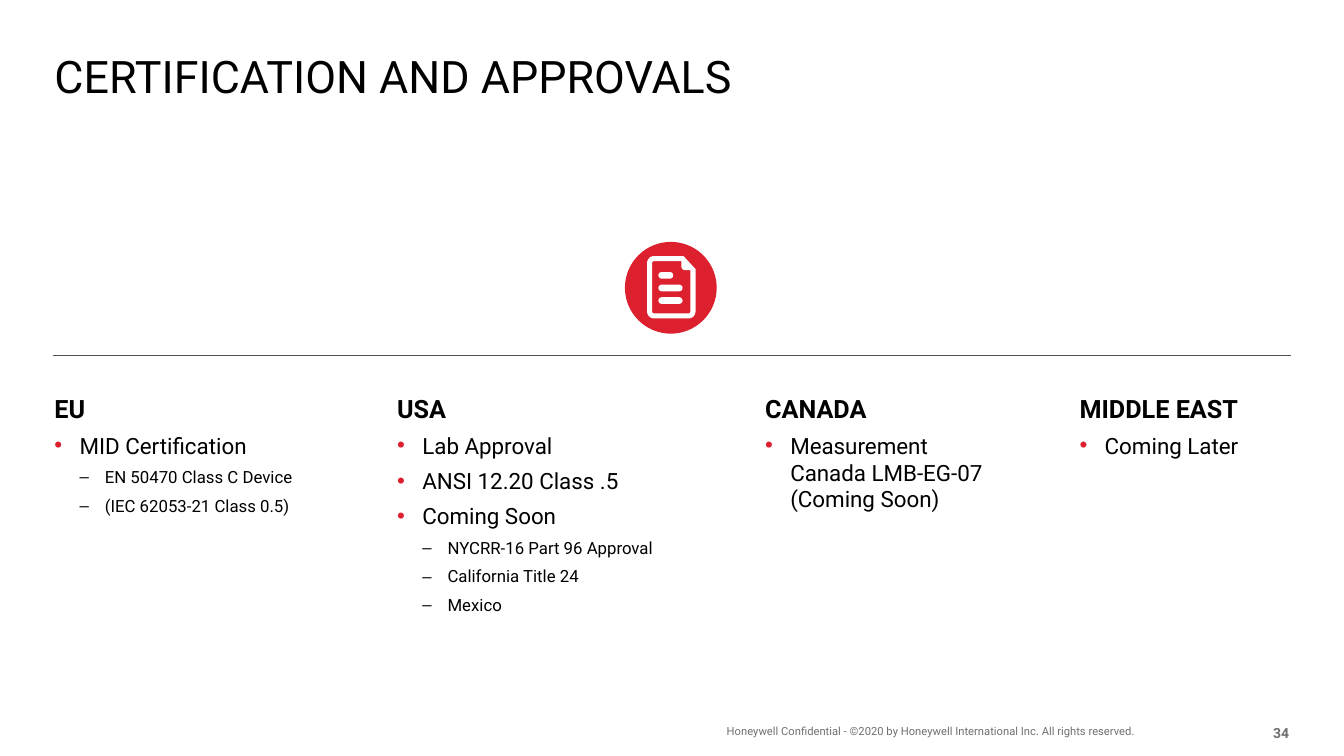
"""Build the certification and approvals slide."""
from math import cos, radians, sin

from lxml.etree import SubElement
from pptx import Presentation
from pptx.dml.color import RGBColor
from pptx.enum.shapes import MSO_CONNECTOR as Connector, MSO_SHAPE as Shape
from pptx.enum.text import MSO_ANCHOR as Anchor, MSO_AUTO_SIZE as AutoSize, PP_ALIGN as Align
from pptx.oxml.ns import qn
from pptx.util import Pt

RED, BLACK, WHITE, GREY, RULE = "DC202E", "000000", "FFFFFF", "707070", "505050"


def paint(target, color):
    if hasattr(target, "solid"):
        target.solid()
        target = target.fore_color
    target.rgb = RGBColor.from_string(color)


def write(para, text, size, color=BLACK, bold=False):
    for number, line in enumerate(text.split("\n")):
        if number:
            para.add_line_break()
        span = para.add_run()
        span.text = line
        span.font.name, span.font.size, span.font.bold = "Roboto", Pt(size), bold
        paint(span.font.color, color)


deck = Presentation()
deck.slide_width, deck.slide_height = Pt(960), Pt(540)
page = deck.slides.add_slide(deck.slide_layouts.get_by_name("Comparison"))
title, *bodies = page.placeholders

footer = page.shapes.add_textbox(0, 0, 0, 0)
page_number = page.shapes.add_textbox(0, 0, 0, 0)
frames = [
    (title, 38.9, 38.9, 882, 33.1, Anchor.TOP),
    (bodies[0], 38.9, 280.8, 222.5, 160.6, Anchor.TOP),
    (bodies[1], 283.7, 280.8, 240.5, 160.6, Anchor.TOP),
    (bodies[2], 546.5, 280.8, 202.3, 160.6, Anchor.TOP),
    (bodies[3], 771.1, 280.8, 167, 160.6, Anchor.TOP),
    (footer, 519.1, 509.8, 324, 17.3, Anchor.BOTTOM),
    (page_number, 882, 510.5, 38.9, 18.7, Anchor.BOTTOM),
]
for box, left, top, width, height, anchor in frames:
    box.left, box.top, box.width, box.height = Pt(left), Pt(top), Pt(width), Pt(height)
    frame = box.text_frame
    frame.margin_left = frame.margin_top = frame.margin_right = frame.margin_bottom = 0
    frame.auto_size, frame.word_wrap, frame.vertical_anchor = AutoSize.NONE, True, anchor

heading = title.text_frame.paragraphs[0]
heading.alignment, heading.line_spacing = Align.LEFT, 0.9
write(heading, "CERTIFICATION AND APPROVALS", 32)
write(footer.text_frame.paragraphs[0],
      "Honeywell Confidential - ©2020 by Honeywell International Inc. All rights reserved.", 8, GREY)
page_number.text_frame.paragraphs[0].alignment = Align.RIGHT
write(page_number.text_frame.paragraphs[0], "34", 10, GREY, True)

regions = [
    [(0, "EU"), (1, "MID Certification"), (2, "EN 50470 Class C Device"),
     (2, "(IEC 62053-21 Class 0.5)")],
    [(0, "USA"), (1, "Lab Approval"), (1, "ANSI 12.20 Class .5"), (1, "Coming Soon"),
     (2, "NYCRR-16 Part 96 Approval"), (2, "California Title 24"), (2, "Mexico")],
    [(0, "CANADA"), (1, "Measurement \nCanada LMB-EG-07 (Coming Soon)")],
    [(0, "MIDDLE EAST"), (1, "Coming Later")],
]
sizes = [18, 16, 12]
bullets = [None, ("•", RED), ("‒", BLACK)]
for body, entries in zip(bodies, regions):
    frame = body.text_frame
    for number, (level, text) in enumerate(entries):
        para = frame.add_paragraph() if number else frame.paragraphs[0]
        para.level = level
        properties = para._p.get_or_add_pPr()
        properties.set("marL", str(Pt(18 * level)))
        properties.set("indent", str(Pt(-18 if level else 0)))
        if level:
            mark, color = bullets[level]
            tint = SubElement(properties, qn("a:buClr"))
            SubElement(tint, qn("a:srgbClr"), val=color)
            SubElement(properties, qn("a:buChar"), char=mark)
        else:
            SubElement(properties, qn("a:buNone"))
        para.space_before, para.space_after = Pt(0), Pt(6)
        write(para, text, sizes[level], bold=level == 0)

rule = page.shapes.add_connector(Connector.STRAIGHT, Pt(37.7), Pt(253.7), Pt(922.3), Pt(253.7))
rule.line.width = Pt(0.5)
paint(rule.line.fill, RULE)
SubElement(rule._element.spPr, qn("a:effectLst"))

icon = []
disc = page.shapes.add_shape(Shape.OVAL, Pt(446.4), Pt(172.8), Pt(65.5), Pt(65.5))
icon.append((disc, RED))

outer = [(496.8, 192.2), (488.2, 182.9)]
inner = [(493.2, 193), (489, 193), (487.4, 192.3), (486.7, 190.8), (486.7, 186.5)]
corners = [
    (outer, 5, [(467.2, 187.9, 270), (467.2, 222.5, 180), (491.8, 222.5, 90)]),
    (inner, 1.5, [(467.3, 188, 270), (467.3, 222.4, 180), (491.7, 222.4, 90)]),
]
for contour, radius, centres in corners:
    for x, y, start in centres:
        for turn in range(0, 91, 15):
            angle = radians(start - turn)
            contour.append((x + radius * cos(angle), y + radius * sin(angle)))
outer, inner = [[(Pt(x), Pt(y)) for x, y in contour] for contour in (outer, inner)]
builder = page.shapes.build_freeform(*outer[0])
builder.add_line_segments(outer[1:], close=True)
builder.move_to(*inner[0])
builder.add_line_segments(inner[1:], close=True)
icon.append((builder.convert_to_shape(), WHITE))

for row, width in enumerate([10.6, 17.3, 17.3]):
    bar = page.shapes.add_shape(Shape.ROUNDED_RECTANGLE, Pt(470.3), Pt(194.3 + 9 * row),
                                Pt(width), Pt(4.8))
    bar.adjustments[0] = 0.5
    icon.append((bar, WHITE))
for part, color in icon:
    part.shadow.inherit = False
    paint(part.fill, color)
    part.line.fill.background()

deck.save("out.pptx")
